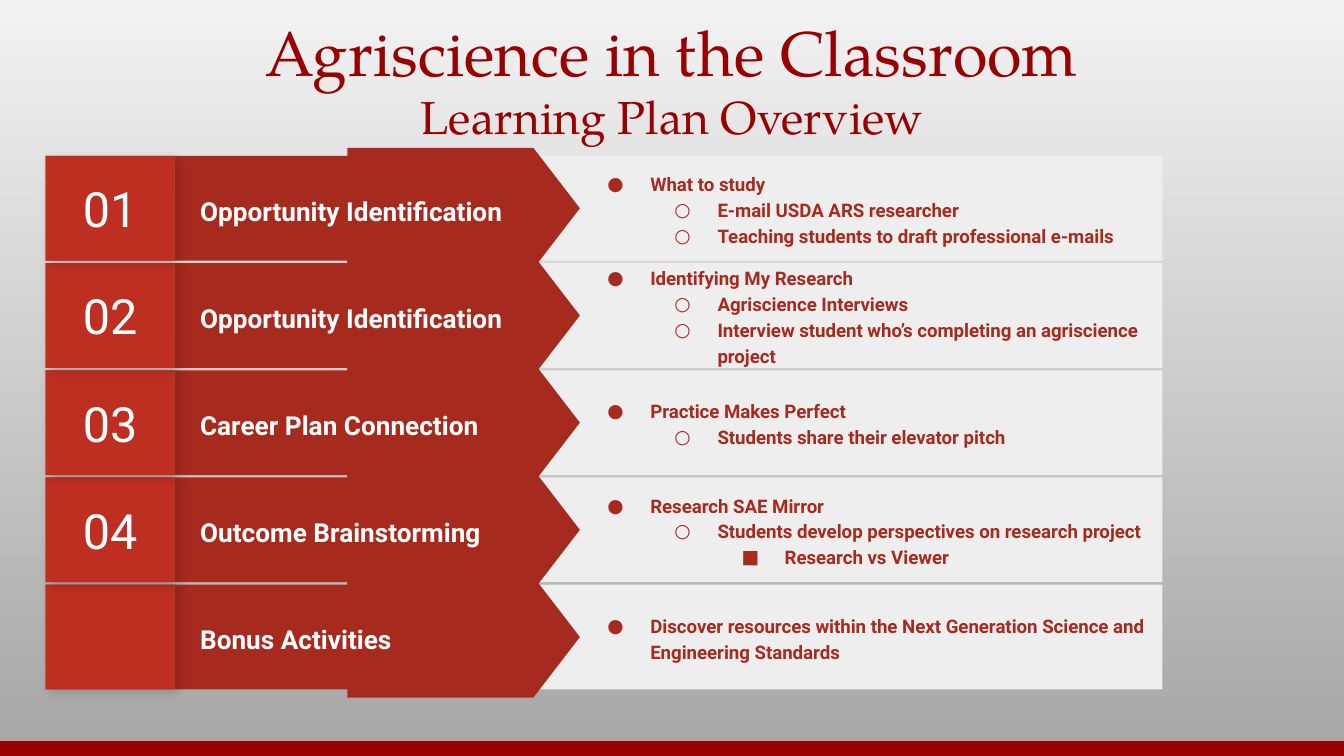
from lxml.etree import SubElement
from pptx import Presentation
from pptx.dml.color import RGBColor
from pptx.enum.shapes import MSO_SHAPE
from pptx.enum.text import MSO_ANCHOR, PP_ALIGN
from pptx.oxml.ns import qn
from pptx.util import Inches, Pt

WIDTH = 10
HEIGHT = WIDTH * 9 / 16
LEFT, ROW_WIDTH, ROW_HEIGHT = 0.34, 8.31, 0.78
FIRST_TOP, LAST_TOP = 1.16, 4.35
CRIMSON, BRICK, RED, DARK_RED = "990000", "A72A1E", "BE2F22", "B02C20"
PALE, WHITE = "EEEEEE", "FFFFFF"
BULLETS = "●○■"

# Number, heading, and (level, text) details
STEPS = [
    ("01", "Opportunity Identification", [
        (0, "What to study"),
        (1, "E-mail USDA ARS researcher"),
        (1, "Teaching students to draft professional e-mails")]),
    ("02", "Opportunity Identification", [
        (0, "Identifying My Research"),
        (1, "Agriscience Interviews"),
        (1, "Interview student who’s completing an agriscience project")]),
    ("03", "Career Plan Connection", [
        (0, "Practice Makes Perfect"),
        (1, "Students share their elevator pitch")]),
    ("04", "Outcome Brainstorming", [
        (0, "Research SAE Mirror"),
        (1, "Students develop perspectives on research project"),
        (2, "Research vs Viewer")]),
    ("", "Bonus Activities", [
        (0, "Discover resources within the Next Generation Science and "
            "Engineering Standards")]),
]


def color(value):
    return RGBColor.from_string(value)


def add_block(shapes, box, fill, kind=MSO_SHAPE.RECTANGLE):
    block = shapes.add_shape(kind, *map(Inches, box))
    block.shadow.inherit = False
    block.fill.solid()
    block.fill.fore_color.rgb = color(fill)
    block.line.fill.background()
    return block


def set_up_frame(shape, anchor=MSO_ANCHOR.MIDDLE):
    frame = shape.text_frame
    frame.word_wrap = True
    frame.vertical_anchor = anchor
    frame.margin_left = frame.margin_right = Inches(0.1)
    frame.margin_top = frame.margin_bottom = Inches(0.1)
    return frame


def add_label(shapes, box, anchor=MSO_ANCHOR.MIDDLE):
    return set_up_frame(shapes.add_textbox(*map(Inches, box)), anchor)


def style(para, size, fill, name="Roboto", bold=False):
    for span in para.runs:
        span.font.size = Pt(size)
        span.font.name = name
        span.font.bold = bold
        span.font.color.rgb = color(fill)


def add_soft_shadow(shape):
    effects = shape._element.spPr.find(qn("a:effectLst"))
    shadow = SubElement(effects, qn("a:outerShdw"), blurRad=str(Pt(5.6)),
                        dist=str(Pt(2.2)), dir="2700000", algn="bl",
                        rotWithShape="0")
    black = SubElement(shadow, qn("a:srgbClr"), val="000000")
    SubElement(black, qn("a:alpha"), val="17000")


def add_bullet(para, level):
    para.level = level
    properties = para._p.get_or_add_pPr()
    properties.set("marL", str(Inches(0.5 * (level + 1))))
    properties.set("indent", str(Inches(-0.32)))
    tint = SubElement(properties, qn("a:buClr"))
    SubElement(tint, qn("a:srgbClr"), val=BRICK)
    SubElement(properties, qn("a:buSzPts"), val="1000")
    SubElement(properties, qn("a:buFont"), typeface="Roboto")
    SubElement(properties, qn("a:buChar"), char=BULLETS[level])


def add_title(page, box):
    frame = add_label(page.shapes, box, MSO_ANCHOR.BOTTOM)
    frame.text = "Agriscience in the Classroom\nLearning Plan Overview"
    for para, size in zip(frame.paragraphs, (33.8, 24.8)):
        para.alignment = PP_ALIGN.CENTER
        para.line_spacing = 0.97
        style(para, size, CRIMSON, "TeX Gyre Pagella")


def add_number(shapes, box, number):
    add_soft_shadow(add_block(shapes, box, DARK_RED))
    tile = add_block(shapes, box, RED)
    if number:
        frame = set_up_frame(tile)
        frame.text = number
        para = frame.paragraphs[0]
        para.alignment = PP_ALIGN.CENTER
        style(para, 26, WHITE)


def add_details(shapes, box, details):
    frame = add_label(shapes, box)
    frame.text = "\n".join(text for _, text in details)
    for para, (level, _) in zip(frame.paragraphs, details):
        add_bullet(para, level)
        para.line_spacing = 1.15
        style(para, 10, BRICK, bold=True)


def add_step(page, box, number, heading, details):
    left, top, width, height = box
    shapes = page.shapes.add_group_shape().shapes
    right = left + width

    add_block(shapes, (left + 2.98, top, width - 2.98, height), PALE)
    add_block(shapes, (left + 0.96, top, 2.57, height), BRICK)

    # The arrow is a downward tag turned to point right
    tag_width, tag_height = 0.9, 1.73
    center_x, center_y = left + 3.11, top + height / 2
    arrow = add_block(shapes, (center_x - tag_width / 2,
                               center_y - tag_height / 2,
                               tag_width, tag_height),
                      BRICK, MSO_SHAPE.FLOWCHART_OFFPAGE_CONNECTOR)
    arrow.rotation = 270

    frame = add_label(shapes, (left + 1.05, top + 0.09, 2.71, 0.6))
    frame.text = heading
    frame.paragraphs[0].line_spacing = 1.15
    style(frame.paragraphs[0], 14, WHITE, bold=True)

    add_number(shapes, (left, top, 0.96, height), number)
    add_details(shapes, (right - 4.41, top, 4.41, height), details)


def main():
    deck = Presentation()
    deck.slide_width, deck.slide_height = Inches(WIDTH), Inches(HEIGHT)
    page = deck.slides.add_slide(deck.slide_layouts[6])

    backdrop = page.background.fill
    backdrop.gradient()
    backdrop.gradient_angle = 270
    for stop, tint in zip(backdrop.gradient_stops, ("F2F2F2", "A6A6A6")):
        stop.color.rgb = color(tint)

    add_block(page.shapes, (0, HEIGHT - 0.11, WIDTH, 0.11), CRIMSON)
    add_title(page, (LEFT, 0.27, WIDTH - 2 * LEFT, 0.91))

    # Stacked from the bottom so that each arrow overlaps the row below it
    pitch = (LAST_TOP - FIRST_TOP) / (len(STEPS) - 1)
    for index, step in reversed(list(enumerate(STEPS))):
        top = FIRST_TOP + index * pitch
        add_step(page, (LEFT, top, ROW_WIDTH, ROW_HEIGHT), *step)

    deck.save("out.pptx")


if __name__ == "__main__":
    main()
